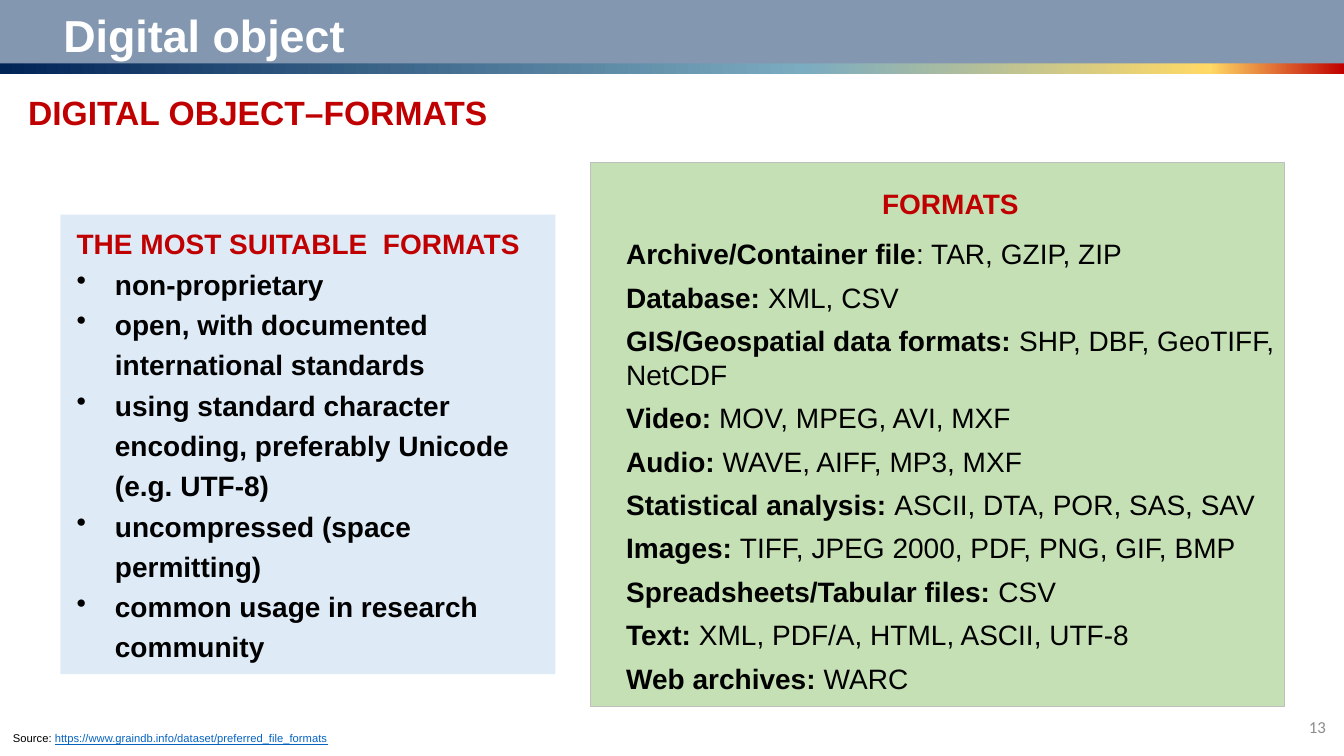
from lxml import etree
from pptx import Presentation
from pptx import util as u
from pptx.dml.color import RGBColor
from pptx.enum import shapes, text
from pptx.oxml.ns import qn

COLORS = {
    "red": "C00000", "black": "000000", "white": "FFFFFF", "grey": "8C8C8C",
    "link": "0563C1", "bar": "8497B0", "blue": "DEEBF7", "green": "C5E0B4",
    "edge": "BFBFBF", "navy": "012457", "teal": "7CACC0", "gold": "FFD966",
}
STOPS = [(0, "navy"), (60, "teal"), (90, "gold"), (100, "red")]
NEEDS = [
    "non-proprietary",
    "open, with documented international standards",
    "using standard character encoding, preferably Unicode (e.g. UTF-8)",
    "uncompressed (space permitting)",
    "common usage in research community",
]
FORMATS = [
    ("Archive/Container file", ": TAR, GZIP, ZIP"),
    ("Database: ", "XML, CSV"),
    ("GIS/Geospatial data formats: ", "SHP, DBF, GeoTIFF, NetCDF"),
    ("Video:", " MOV, MPEG, AVI, MXF"),
    ("Audio: ", "WAVE, AIFF, MP3, MXF"),
    ("Statistical analysis: ", "ASCII, DTA, POR, SAS, SAV"),
    ("Images: ", "TIFF, JPEG 2000, PDF, PNG, GIF, BMP"),
    ("Spreadsheets/Tabular files: ", "CSV"),
    ("Text:", " XML, PDF/A, HTML, ASCII, UTF-8"),
    ("Web archives: ", "WARC"),
]
SOURCE = ("Source: ", "https://www.graindb.info/dataset/preferred_file_formats")


def rgb(name):
    return RGBColor.from_string(COLORS[name])


def style(font, size, color, bold=False, face="Arial"):
    font.name, font.size, font.bold = face, u.Pt(size), bold
    font.color.rgb = rgb(color)


def add_rect(slide, box, fill, edge=None):
    rect = slide.shapes.add_shape(shapes.MSO_SHAPE.RECTANGLE, *map(u.Inches, box))
    rect.shadow.inherit = False
    rect.fill.solid()
    rect.fill.fore_color.rgb = rgb(fill)
    if edge:
        rect.line.color.rgb = rgb(edge)
        rect.line.width = u.Pt(0.75)
    else:
        rect.line.fill.background()
    return rect


def blend(rect):
    """Swap the two default gradient stops for those in STOPS."""
    rect.fill.gradient()
    rect.fill.gradient_angle = 0
    stops = rect._element.spPr.find(qn("a:gradFill")).find(qn("a:gsLst"))
    for stop in list(stops):
        stops.remove(stop)
    for pos, name in STOPS:
        stop = etree.SubElement(stops, qn("a:gs"), pos=str(pos * 1000))
        etree.SubElement(stop, qn("a:srgbClr"), val=COLORS[name])


def set_frame(shape, insets):
    frame = shape.text_frame
    frame.word_wrap = True
    frame.vertical_anchor = text.MSO_ANCHOR.TOP
    (frame.margin_left, frame.margin_top,
     frame.margin_right, frame.margin_bottom) = map(u.Inches, insets)
    return frame


def add_line(frame, words, size, color, bold=False, face="Arial",
             align=text.PP_ALIGN.LEFT):
    """Fill the empty first paragraph, or add one after it."""
    para = frame.paragraphs[0]
    if para.runs:
        para = frame.add_paragraph()
    para.alignment = align
    style(para.font, size, color, bold, face)
    for part in words:
        para.add_run().text = part
    return para


def add_label(slide, box, words, *look, **more):
    label = slide.shapes.add_textbox(*map(u.Inches, box))
    frame = set_frame(label, (0.1, 0.05, 0.1, 0.05))
    return frame, add_line(frame, words, *look, **more)


def add_bullet(para):
    props = para._p.get_or_add_pPr()
    props.set("marL", str(u.Inches(0.38)))
    props.set("indent", str(-u.Inches(0.38)))
    mark = etree.Element(qn("a:buChar"), char="•")
    props.find(qn("a:defRPr")).addprevious(mark)


def main():
    deck = Presentation()
    deck.slide_width, deck.slide_height = u.Inches(13.33), u.Inches(7.5)
    slide = deck.slides.add_slide(deck.slide_layouts[6])

    blend(add_rect(slide, (0, 0.51, 13.33, 0.23), "navy"))
    add_rect(slide, (0, 0, 13.33, 0.63), "bar")
    add_label(slide, (0.03, 0.03, 7.21, 0.61), ["\tDigital object"], 32, "white", True)
    frame, _ = add_label(slide, (12.78, 7.01, 0.47, 0.4), ["13"], 12, "grey",
                         face="Calibri", align=text.PP_ALIGN.RIGHT)
    frame.vertical_anchor = text.MSO_ANCHOR.MIDDLE
    _, para = add_label(slide, (0.03, 7.21, 6.22, 0.24), SOURCE, 8, "black")
    link = para.runs[1].font
    link.color.rgb = rgb("link")
    link.underline = True

    panel = add_rect(slide, (0.6, 2.13, 4.91, 4.56), "blue")
    frame = set_frame(panel, (0.16, 0.12, 0.1, 0.08))
    add_line(frame, ["THE MOST SUITABLE  FORMATS"], 20, "red", True)
    for need in NEEDS:
        para = add_line(frame, [need], 20, "black", True)
        para.line_spacing = 1.2
        add_bullet(para)

    panel = add_rect(slide, (5.86, 1.61, 6.88, 5.4), "green", "edge")
    frame = set_frame(panel, (0.35, 0.24, 0.1, 0.05))
    add_line(frame, ["FORMATS"], 20, "red", True, align=text.PP_ALIGN.CENTER)
    for row, pair in enumerate(FORMATS):
        para = add_line(frame, pair, 20, "black")
        para.space_before = u.Pt(7 if row else 12)
        para.runs[0].font.bold = True

    add_label(slide, (0.18, 0.86, 4.99, 0.5), ["DIGITAL OBJECT–FORMATS"],
              24, "red", True)
    deck.save("out.pptx")


if __name__ == "__main__":
    main()
